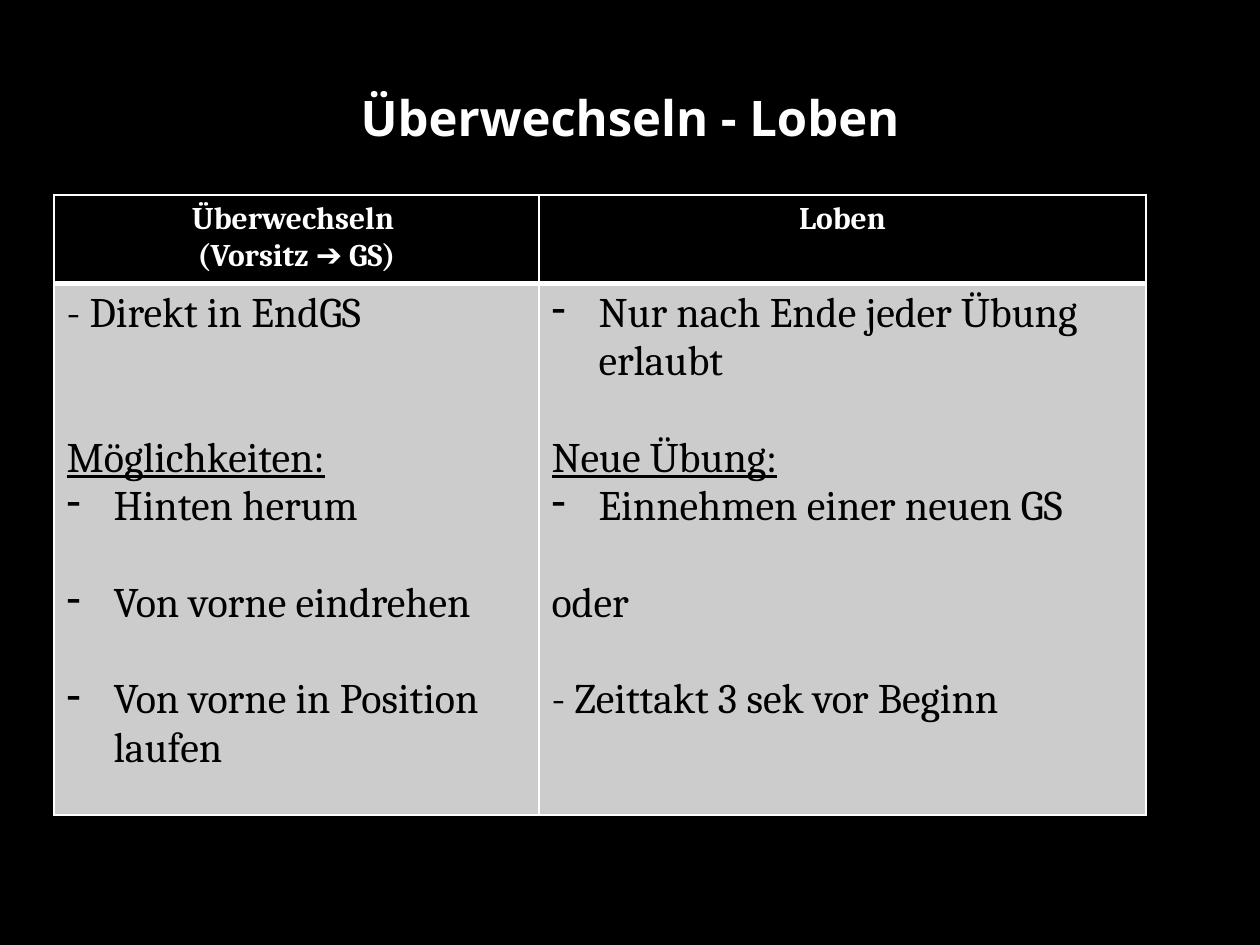
import dataclasses
import typing

import lxml.etree
import pptx
import pptx.dml.color
import pptx.enum.text
import pptx.oxml.ns
import pptx.util

PX = 914400 / 126
BLACK = pptx.dml.color.RGBColor(0x00, 0x00, 0x00)
WHITE = pptx.dml.color.RGBColor(0xFF, 0xFF, 0xFF)
GREY = pptx.dml.color.RGBColor(0xCC, 0xCC, 0xCC)
LINE_GAP = 27.6
INDENT = 47
COLUMN_WIDTHS = [485, 607]
ROW_HEIGHTS = [86, 532]
CENTER = pptx.enum.text.PP_ALIGN.CENTER
LEFT = pptx.enum.text.PP_ALIGN.LEFT


@dataclasses.dataclass(frozen=True)
class TextStyle:
    size: int
    color: pptx.dml.color.RGBColor
    bold: bool
    alignment: pptx.enum.text.PP_ALIGN


@dataclasses.dataclass(frozen=True)
class Line:
    text: str
    bullet: bool = False
    underline: bool = False
    gap_lines: int = 0


@dataclasses.dataclass(frozen=True)
class RowStyle:
    text: TextStyle
    fill: pptx.dml.color.RGBColor
    top_border: int
    bottom_border: int


TITLE = TextStyle(28, WHITE, True, CENTER)
ROW_STYLES = [
    RowStyle(TextStyle(18, WHITE, True, CENTER), BLACK, 1, 3),
    RowStyle(TextStyle(24, BLACK, False, LEFT), GREY, 3, 1),
]
ROWS = [
    [
        [Line("Überwechseln "), Line("(Vorsitz ➔ GS)")],
        [Line("Loben")],
    ],
    [
        [
            Line("- Direkt in EndGS"),
            Line("Möglichkeiten:", underline=True, gap_lines=2),
            Line("Hinten herum", bullet=True),
            Line("Von vorne eindrehen", bullet=True, gap_lines=1),
            Line("Von vorne in Position laufen", bullet=True, gap_lines=1),
        ],
        [
            Line("Nur nach Ende jeder Übung erlaubt", bullet=True),
            Line("Neue Übung:", underline=True, gap_lines=1),
            Line("Einnehmen einer neuen GS", bullet=True),
            Line("oder", gap_lines=1),
            Line("- Zeittakt 3 sek vor Beginn", gap_lines=1),
        ],
    ],
]


def px(length: int) -> pptx.util.Emu:
    return pptx.util.Emu(round(length * PX))


def add_element(parent: typing.Any, tag: str, **attributes: str) -> typing.Any:
    return lxml.etree.SubElement(parent, pptx.oxml.ns.qn(tag), attributes)


def add_run(paragraph: typing.Any, text: str, name: str, style: TextStyle, underline: bool) -> None:
    run = paragraph.add_run()
    run.text = text
    run.font.color.rgb = style.color
    values = {
        "name": name,
        "size": pptx.util.Pt(style.size),
        "bold": style.bold,
        "underline": underline,
    }
    for attribute, value in values.items():
        setattr(run.font, attribute, value)


def write_line(paragraph: typing.Any, line: Line, style: TextStyle, font: str) -> None:
    paragraph.alignment = style.alignment
    if line.gap_lines:
        paragraph.space_before = pptx.util.Pt(line.gap_lines * LINE_GAP)
    if line.bullet:
        properties = paragraph._p.get_or_add_pPr()
        properties.set("marL", str(px(INDENT)))
        properties.set("indent", str(-px(INDENT)))
        add_element(properties, "a:buFontTx")
        add_element(properties, "a:buChar", char="-")
    before, arrow, after = line.text.partition("➔")
    for text, name in [(before, font), (arrow, "Arial"), (after, font)]:
        if text:
            add_run(paragraph, text, name, style, line.underline)


def write_lines(frame: typing.Any, lines: list[Line], style: TextStyle, font: str) -> None:
    for index, line in enumerate(lines):
        paragraph = frame.add_paragraph() if index else frame.paragraphs[0]
        write_line(paragraph, line, style, font)


def add_title(slide: typing.Any) -> None:
    shape = slide.shapes.add_textbox(px(63), px(38), px(1134), px(158))
    frame = shape.text_frame
    values = {"word_wrap": True, "vertical_anchor": pptx.enum.text.MSO_ANCHOR.MIDDLE}
    for attribute, value in values.items():
        setattr(frame, attribute, value)
    write_lines(frame, [Line("Überwechseln - Loben")], TITLE, "Noto Sans")


def format_cell(cell: typing.Any, style: RowStyle) -> None:
    properties = cell._tc.get_or_add_tcPr()
    borders = {"L": 1, "R": 1, "T": style.top_border, "B": style.bottom_border}
    for side, width in borders.items():
        border = add_element(properties, f"a:ln{side}", w=str(pptx.util.Pt(width)))
        fill = add_element(border, "a:solidFill")
        add_element(fill, "a:srgbClr", val=str(WHITE))
    cell.fill.solid()
    cell.fill.fore_color.rgb = style.fill


def add_comparison_table(slide: typing.Any) -> None:
    width, height = px(sum(COLUMN_WIDTHS)), px(sum(ROW_HEIGHTS))
    frame = slide.shapes.add_table(len(ROWS), len(COLUMN_WIDTHS), px(54), px(195), width, height)
    table = frame.table
    table.horz_banding = False
    for column, column_width in zip(table.columns, COLUMN_WIDTHS):
        column.width = px(column_width)
    for row, row_height, style, contents in zip(table.rows, ROW_HEIGHTS, ROW_STYLES, ROWS):
        row.height = px(row_height)
        for cell, lines in zip(row.cells, contents):
            format_cell(cell, style)
            write_lines(cell.text_frame, lines, style.text, "Cambria")


def main() -> None:
    presentation = pptx.Presentation()
    presentation.slide_width = px(1260)
    presentation.slide_height = px(945)
    slide = presentation.slides.add_slide(presentation.slide_layouts[6])
    slide.background.fill.solid()
    slide.background.fill.fore_color.rgb = BLACK
    add_title(slide)
    add_comparison_table(slide)
    presentation.save("out.pptx")


if __name__ == "__main__":
    main()
